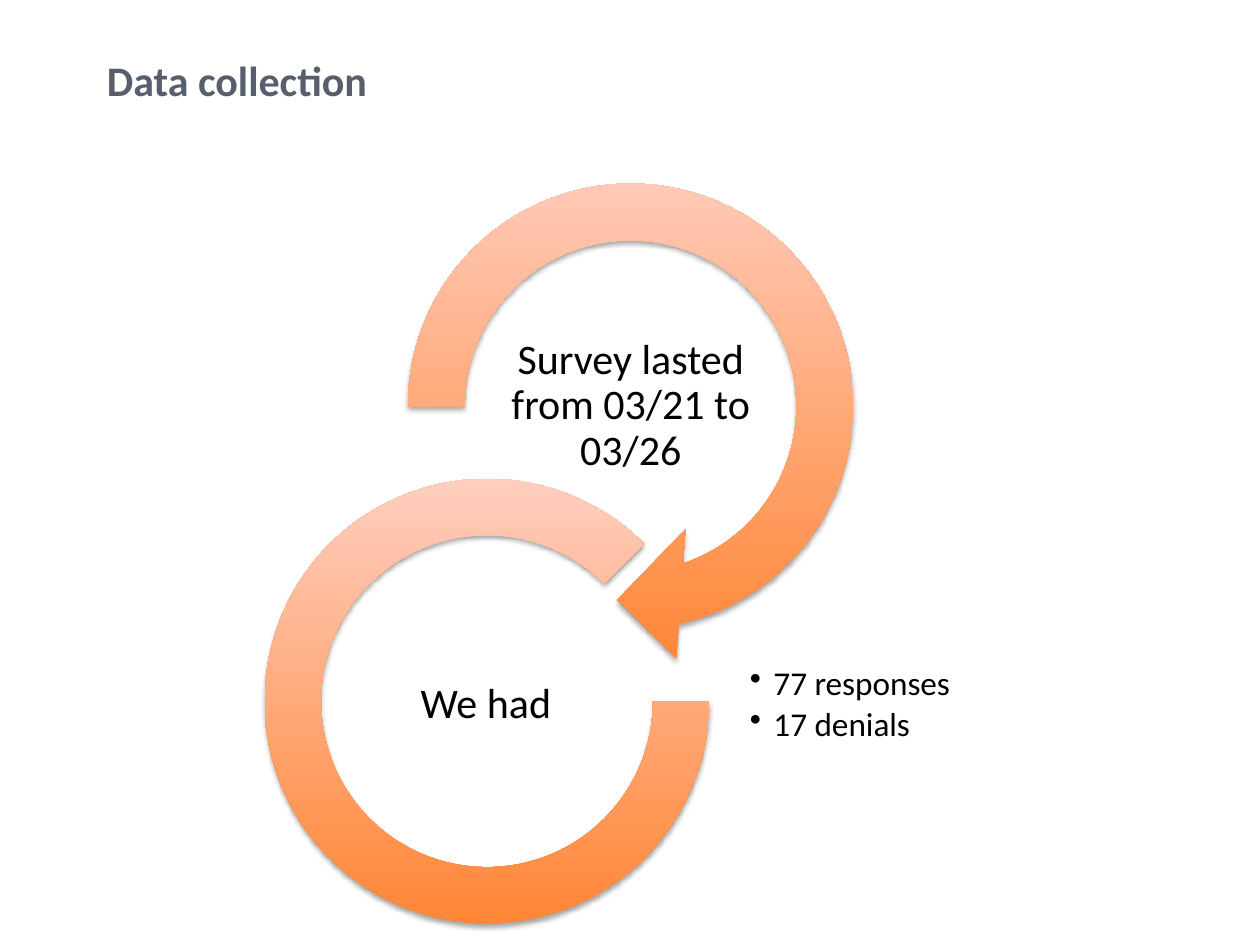
from lxml import etree
from pptx import Presentation
from pptx.dml.color import RGBColor
from pptx.enum.shapes import MSO_SHAPE as Shape
from pptx.enum.text import MSO_ANCHOR as Anchor, PP_ALIGN as Align
from pptx.oxml.ns import qn
from pptx.util import Pt

BLACK = RGBColor(0x00, 0x00, 0x00)
SLATE = RGBColor(0x57, 0x5F, 0x6D)
ORANGE = RGBColor(0xFF, 0x86, 0x36)
PEACH = RGBColor(0xFF, 0xCE, 0xBF)
FONT = "Calibri"
LABEL_WIDTH, LABEL_HEIGHT = 165, 83
INSET = 1.5


def add_shadow(shape):
    shape.shadow.inherit = False
    effects = shape._element.spPr.find(qn("a:effectLst"))
    shadow = etree.SubElement(
        effects, qn("a:outerShdw"), blurRad=str(Pt(3.1)), dist=str(Pt(1.8)),
        dir="5400000", rotWithShape="0")
    color = etree.SubElement(shadow, qn("a:srgbClr"), val=str(BLACK))
    etree.SubElement(color, qn("a:alpha"), val="35000")


def add_bullet(paragraph, indent):
    properties = paragraph._p.get_or_add_pPr()
    properties.set("marL", str(Pt(indent)))
    properties.set("indent", str(-Pt(indent)))
    etree.SubElement(properties, qn("a:buChar"), char="•")


def add_text(slide, box, lines, size, color=BLACK, bold=False, align=Align.LEFT,
             inset=None, spacing=None, after=None, bullet_indent=None):
    frame = slide.shapes.add_textbox(*map(Pt, box)).text_frame
    frame.word_wrap = True
    frame.vertical_anchor = Anchor.MIDDLE
    if inset is not None:
        frame.margin_left = frame.margin_right = Pt(inset)
        frame.margin_top = frame.margin_bottom = Pt(inset)
    frame.text = "\n".join(lines)
    for paragraph in frame.paragraphs:
        paragraph.alignment = align
        if spacing:
            paragraph.line_spacing = spacing
        if after:
            paragraph.space_after = Pt(after)
        if bullet_indent:
            add_bullet(paragraph, bullet_indent)
        paragraph.font.name = FONT
        paragraph.font.size = Pt(size)
        paragraph.font.bold = bold
        paragraph.font.color.rgb = color


def add_title(slide, box, text):
    add_text(slide, box, [text], 24, SLATE, bold=True)


def add_ring(slide, box, kind, adjustments, label, label_shift=(0, 0)):
    left, top, width, height = box
    ring = slide.shapes.add_shape(kind, *map(Pt, box))
    for index, value in enumerate(adjustments):
        ring.adjustments[index] = value
    ring.fill.gradient()
    ring.fill.gradient_angle = 90
    for stop, color in zip(ring.fill.gradient_stops, (ORANGE, PEACH)):
        stop.color.rgb = color
    ring.line.fill.background()
    add_shadow(ring)
    shift_x, shift_y = label_shift
    label_box = (left + (width - LABEL_WIDTH) / 2 + shift_x,
                 top + (height - LABEL_HEIGHT) / 2 + shift_y,
                 LABEL_WIDTH, LABEL_HEIGHT)
    add_text(slide, label_box, [label], 24, align=Align.CENTER,
             inset=INSET, spacing=0.9, after=8.4)


def add_results(slide, box, lines):
    add_text(slide, box, lines, 19, inset=INSET, spacing=0.9,
             after=2.85, bullet_indent=13.5)


def main():
    presentation = Presentation()
    presentation.slide_width, presentation.slide_height = Pt(720), Pt(540)
    slide = presentation.slides.add_slide(presentation.slide_layouts[6])
    add_ring(slide, (212.4, 84.2, 296, 296), Shape.CIRCULAR_ARROW,
             (0.11, 11.42, 45, 108, 0.125), "Survey lasted from 03/21 to 03/26")
    add_ring(slide, (151.2, 273.6, 254.2, 254.2), Shape.BLOCK_ARC,
             (0, 189, 0.127), "We had", label_shift=(-0.7, 2))
    add_results(slide, (427, 344.2, 177, 117.4), ["77 responses", "17 denials"])
    add_title(slide, (54, 12.2, 648, 66.2), "Data collection")
    presentation.save("out.pptx")


if __name__ == "__main__":
    main()
